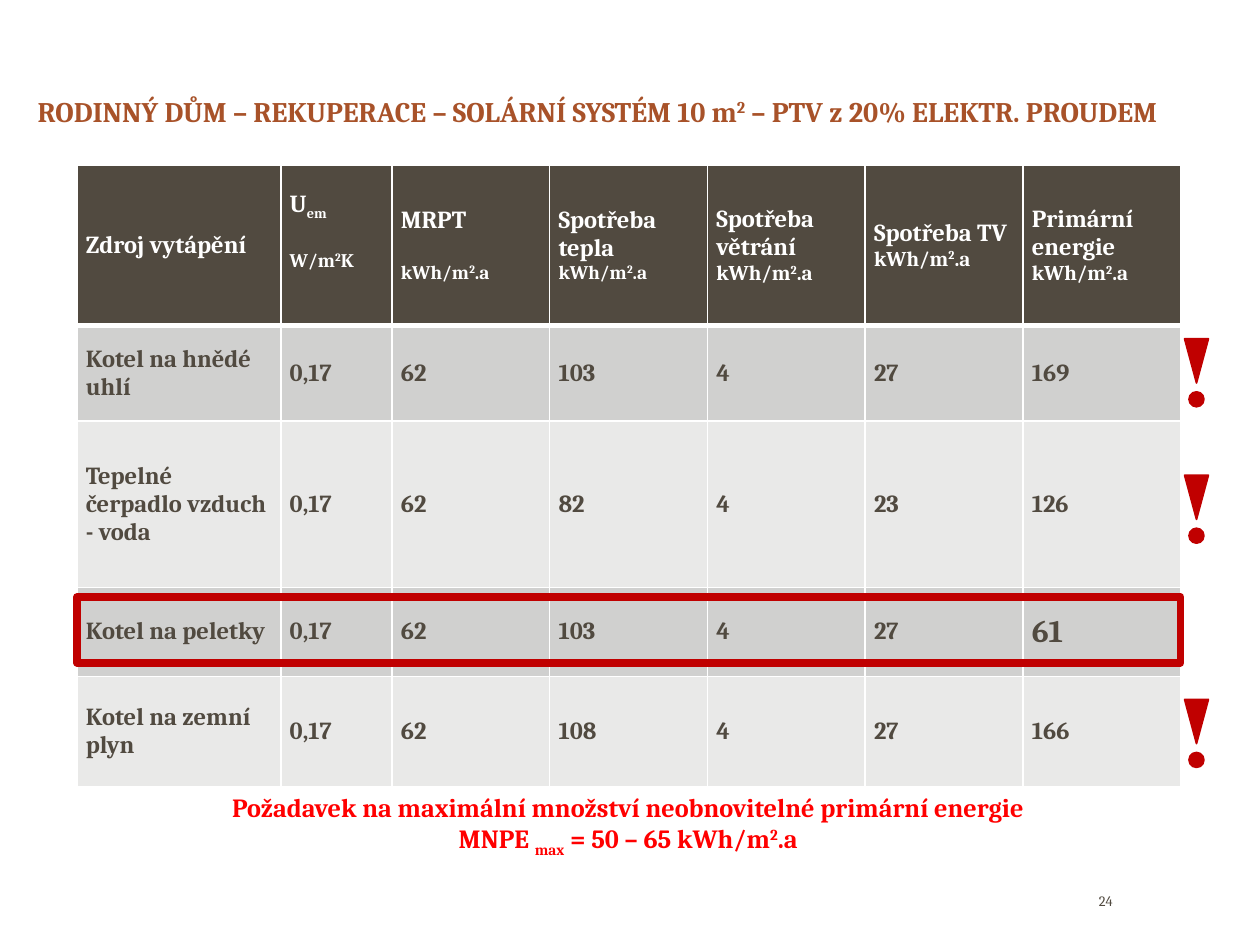
from lxml.etree import SubElement
from pptx import Presentation
from pptx.dml.color import RGBColor
from pptx.enum.shapes import MSO_SHAPE
from pptx.enum.text import MSO_ANCHOR, PP_ALIGN
from pptx.oxml.ns import qn
from pptx.util import Cm, Pt

FONT = "Cambria"
WHITE = RGBColor(0xFF, 0xFF, 0xFF)
BROWN = RGBColor(0x51, 0x4A, 0x40)
RUST = RGBColor(0xA8, 0x52, 0x29)
RED = RGBColor(0xFF, 0x00, 0x00)
DARK_RED = RGBColor(0xC0, 0x00, 0x00)
BANDS = RGBColor(0xD0, 0xD0, 0xCF), RGBColor(0xE9, 0xE9, 0xE8)

# A part that starts with ^ is raised, one that starts with _ is lowered.
SHIFT = {"^": "30000", "_": "-25000"}
UNIT = ["kWh/m", "^2", ".a"]
TITLE = ["RODINNÝ DŮM – REKUPERACE – SOLÁRNÍ SYSTÉM 10 m", "^2",
         " – PTV z 20% ELEKTR. PROUDEM"]
NOTE = [["Požadavek na maximální množství neobnovitelné primární energie"],
        ["MNPE ", "_max", " = 50 – 65 kWh/m", "^2", ".a"]]

# name, unit, unit size, gap above the unit (points)
HEADS = [
    (["Zdroj vytápění"], None, 0, 0),
    (["U", "_em"], ["W/m", "^2", "K"], 11, 16),
    (["MRPT"], UNIT, 11, 16),
    (["Spotřeba tepla"], UNIT, 11, 0),
    (["Spotřeba větrání"], UNIT, 12, 0),
    (["Spotřeba TV"], UNIT, 12, 0),
    (["Primární energie"], UNIT, 12, 0),
]
ROWS = [
    ("Kotel na hnědé uhlí", "0,17", "62", "103", "4", "27", "169"),
    ("Tepelné čerpadlo vzduch - voda", "0,17", "62", "82", "4", "23", "126"),
    ("Kotel na peletky", "0,17", "62", "103", "4", "27", "61"),
    ("Kotel na zemní plyn", "0,17", "62", "108", "4", "27", "166"),
]
BEST = "61"
WIDTHS = [4.11, 2.24] + [3.18] * 5
HEIGHTS = [3.23, 1.93, 3.35, 1.8, 2.21]
LEFT, TOP = 1.55, 3.33
MARKS = [6.83, 9.58, 14.1]


def write(para, parts, size, color, bold=True):
    for part in parts:
        run = para.add_run()
        run.text = part.lstrip("^_")
        font = run.font
        font.name, font.size, font.bold = FONT, Pt(size), bold
        font.color.rgb = color
        if part[0] in SHIFT:
            run._r.get_or_add_rPr().set("baseline", SHIFT[part[0]])


def add_text(slide, box, lines, size, color, align, anchor, bold=True):
    frame = slide.shapes.add_textbox(*map(Cm, box)).text_frame
    frame.word_wrap = True
    frame.vertical_anchor = anchor
    for i, parts in enumerate(lines):
        para = frame.add_paragraph() if i else frame.paragraphs[0]
        para.alignment = align
        write(para, parts, size, color, bold)
    return frame


def style(cell, fill, low):
    """Set margins, white borders (the lower one low points wide) and fill."""
    cell.vertical_anchor = MSO_ANCHOR.MIDDLE
    cell.margin_left = cell.margin_right = Cm(0.18)
    cell.margin_top = cell.margin_bottom = Cm(0.1)
    props = cell._tc.get_or_add_tcPr()
    for side, wide in (("L", 1), ("R", 1), ("T", 1), ("B", low)):
        line = SubElement(props, qn(f"a:ln{side}"), w=str(Pt(wide)))
        solid = SubElement(line, qn("a:solidFill"))
        SubElement(solid, qn("a:srgbClr"), val=str(WHITE))
    cell.fill.solid()
    cell.fill.fore_color.rgb = fill


def add_grid(slide):
    size = len(ROWS) + 1, len(HEADS)
    box = LEFT, TOP, sum(WIDTHS), sum(HEIGHTS)
    table = slide.shapes.add_table(*size, *map(Cm, box)).table
    for col, wide in zip(table.columns, WIDTHS):
        col.width = Cm(wide)
    for row, high in zip(table.rows, HEIGHTS):
        row.height = Cm(high)
    for c, (name, unit, points, gap) in enumerate(HEADS):
        cell = table.cell(0, c)
        style(cell, BROWN, 3)
        write(cell.text_frame.paragraphs[0], name, 14, WHITE)
        if unit:
            para = cell.text_frame.add_paragraph()
            para.space_before = Pt(gap)
            write(para, unit, points, WHITE)
    table.cell(0, 1).margin_bottom = Cm(0.67)
    for r, row in enumerate(ROWS, 1):
        for c, value in enumerate(row):
            cell = table.cell(r, c)
            style(cell, BANDS[(r - 1) % 2], 1)
            points = 18 if value == BEST else 14
            write(cell.text_frame.paragraphs[0], [value], points, BROWN)


def add_shape(shapes, kind, box, width, filled=True):
    shape = shapes.add_shape(kind, *map(Cm, box))
    shape.shadow.inherit = False
    if filled:
        shape.fill.solid()
        shape.fill.fore_color.rgb = DARK_RED
    else:
        shape.fill.background()
    shape.line.color.rgb = DARK_RED
    shape.line.width = Pt(width)
    return shape


def add_mark(slide, top):
    """Draw an exclamation mark."""
    group = slide.shapes.add_group_shape().shapes
    wedge = add_shape(group, MSO_SHAPE.ISOSCELES_TRIANGLE,
                      (23.88, top, 0.48, 0.89), 1)
    wedge.rotation = 180
    add_shape(group, MSO_SHAPE.OVAL, (23.97, top + 1.07, 0.3, 0.3), 1)


def main():
    deck = Presentation()
    deck.slide_width, deck.slide_height = Cm(25.4), Cm(19.05)
    slide = deck.slides.add_slide(deck.slide_layouts[6])
    title = add_text(slide, (0.51, 1.14, 23.98, 1.57), [TITLE], 16.2, RUST,
                     PP_ALIGN.LEFT, MSO_ANCHOR.BOTTOM)
    title.paragraphs[0].line_spacing = 0.9
    add_grid(slide)
    add_text(slide, (21.23, 17.83, 1.45, 0.66), [["24"]], 8.2, BROWN,
             PP_ALIGN.RIGHT, MSO_ANCHOR.MIDDLE, False)
    add_text(slide, (4.09, 15.82, 17.15, 1.55), NOTE, 15, RED,
             PP_ALIGN.CENTER, MSO_ANCHOR.TOP)
    add_shape(slide.shapes, MSO_SHAPE.RECTANGLE,
              (LEFT, 12.04, sum(WIDTHS), 1.32), 4.5, False)
    for top in MARKS:
        add_mark(slide, top)
    deck.save("out.pptx")


if __name__ == "__main__":
    main()
